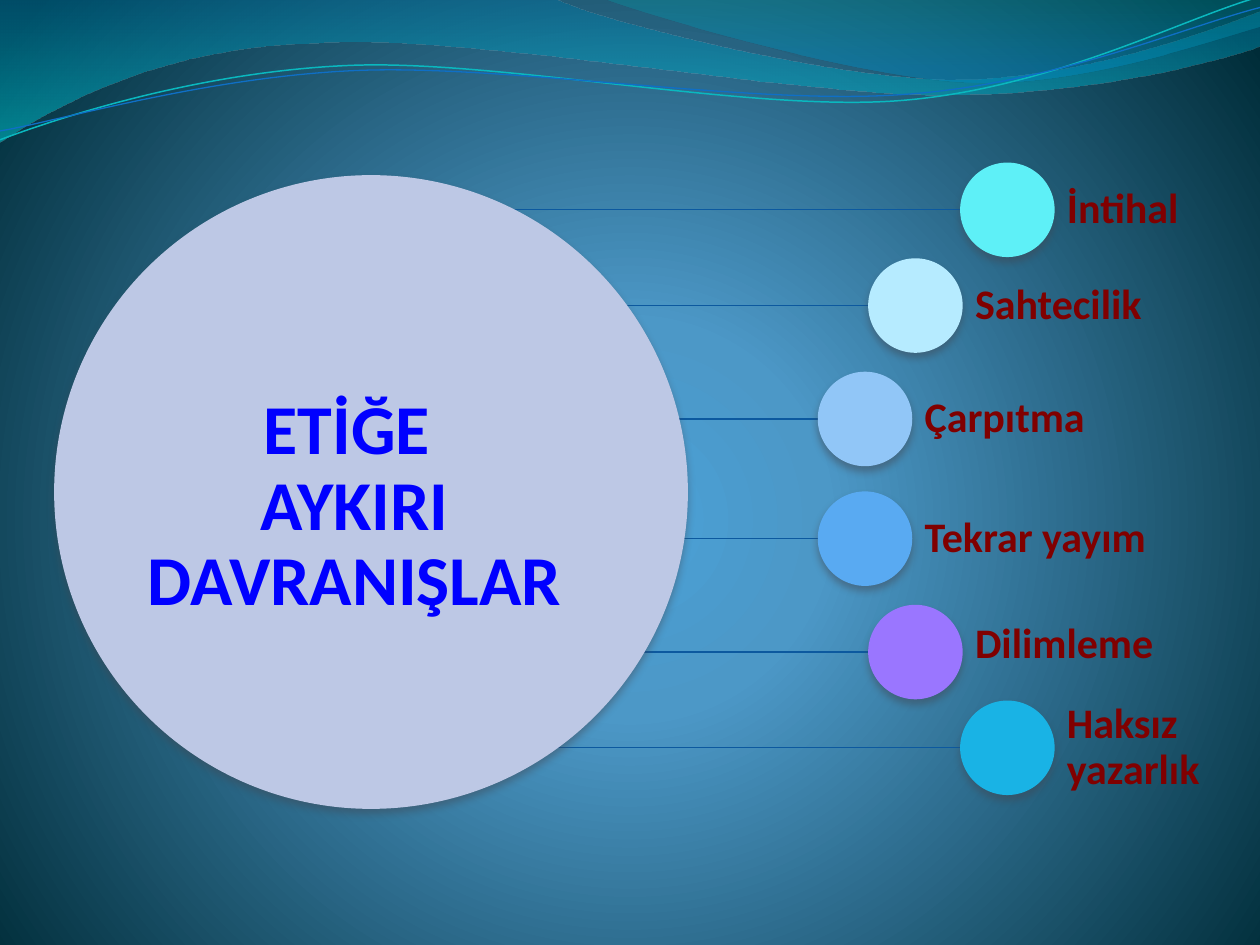
import math
from dataclasses import dataclass

from lxml import etree
from pptx import Presentation
from pptx.dml.color import RGBColor
from pptx.enum.shapes import MSO_CONNECTOR, MSO_SHAPE
from pptx.enum.text import MSO_ANCHOR, PP_ALIGN
from pptx.oxml.ns import qn
from pptx.util import Inches, Pt

OVAL = MSO_SHAPE.OVAL
STRAIGHT = MSO_CONNECTOR.STRAIGHT
LEFT, CENTER = PP_ALIGN.LEFT, PP_ALIGN.CENTER
MIDDLE, BOTTOM = MSO_ANCHOR.MIDDLE, MSO_ANCHOR.BOTTOM

FONT = "Calibri"
BLUE = RGBColor(0x00, 0x00, 0xFF)
MAROON = RGBColor(0x80, 0x00, 0x00)
LAVENDER = RGBColor(0xBD, 0xC8, 0xE5)
LINE_BLUE = RGBColor(0x0C, 0x59, 0x9F)
WAVE_TEAL = RGBColor(0x0A, 0xB8, 0xBF)
WAVE_BLUE = RGBColor(0x0F, 0x6F, 0xC6)
SHADOW = RGBColor(0x42, 0x46, 0x51)

# Gradient stops: position, colour, opacity (numbers in percent)
PAGE_STOPS = [(0, RGBColor(0x4A, 0xA0, 0xD6), 100), (25, RGBColor(0x4C, 0x98, 0xC7), 100),
              (100, RGBColor(0x00, 0x2C, 0x38), 100)]
WIDE_WAVE_STOPS = [(0, RGBColor(0x00, 0x74, 0xA1), 45), (100, RGBColor(0x00, 0xC6, 0xCF), 55)]
SMALL_WAVE_STOPS = [(0, RGBColor(0x00, 0xA1, 0xA9), 30), (80, RGBColor(0x00, 0x8B, 0xBF), 45)]

# Outlines: one point is a straight step, three points are a Bezier step
WIDE_WAVE = [[(0, 0)], [(4.4, -0.01)], [(4.76, 0.17), (6.64, 0.63), (7.58, 0.63)],
             [(8.53, 0.63), (9.58, 0.26), (10, 0.09)], [(10.01, 0.36)],
             [(9.83, 0.44), (8.7, 0.76), (7.46, 0.75)], [(6.22, 0.75), (3.82, 0.28), (2.57, 0.34)],
             [(1.29, 0.36), (0.46, 0.83), (-0.01, 1.13)]]
SMALL_WAVE = [[(4.79, -0.01)], [(5.09, 0.11), (6.82, 0.62), (7.69, 0.65)],
              [(8.56, 0.69), (9.61, 0.32), (10, 0.21)], [(10, 0)]]
TEAL_CURVE = [[(0, 1.11)], [(0.48, 0.93), (1.58, 0.57), (2.77, 0.52)],
              [(3.95, 0.47), (5.93, 0.89), (7.13, 0.8)], [(8.33, 0.71), (9.38, 0.15), (9.98, -0.02)]]
BLUE_CURVE = [[(0, 1.04)], [(0.47, 0.96), (1.64, 0.61), (2.83, 0.56)],
              [(4.03, 0.51), (5.97, 0.84), (7.17, 0.75)], [(8.36, 0.67), (9.41, 0.21), (10, 0.06)]]
CURVE_TILT = -2.7
CURVE_CENTER = (5, 0.58)

DOT = 0.75


@dataclass
class Behaviour:
    """One branch; dot_left and dot_top are measured from the diagram's corner."""
    name: str
    colour: RGBColor
    dot_left: float
    dot_top: float
    label_width: float
    label_shift: float = 0
    line_shift: float = 0


BEHAVIOURS = [
    Behaviour("İntihal", RGBColor(0x5E, 0xF0, 0xF7), 7.19, 0, 1.14),
    Behaviour("Sahtecilik", RGBColor(0xB6, 0xEB, 0xFF), 6.46, 0.76, 2.71, line_shift=-0.37),
    Behaviour("Çarpıtma", RGBColor(0x91, 0xC6, 0xF7), 6.06, 1.66, 1.5),
    Behaviour("Tekrar yayım", RGBColor(0x59, 0xAA, 0xF2), 6.06, 2.61, 2.16),
    Behaviour("Dilimleme", RGBColor(0x9A, 0x76, 0xFF), 6.46, 3.51, 1.63, label_shift=-0.06),
    Behaviour("Haksız yazarlık", RGBColor(0x19, 0xB3, 0xE5), 7.19, 4.27, 1.26),
]


def add_colour(parent, colour, opacity):
    node = etree.SubElement(parent, qn("a:srgbClr"), val=str(colour))
    if opacity < 100:
        etree.SubElement(node, qn("a:alpha"), val=str(opacity * 1000))


def set_gradient(fill, owner, stops, circular=False):
    """Fill with the stops, top to bottom or outwards from a circle."""
    fill.gradient()
    gradient = owner.find(".//" + qn("a:gradFill"))
    for child in list(gradient):
        gradient.remove(child)
    stop_list = etree.SubElement(gradient, qn("a:gsLst"))
    for position, colour, opacity in stops:
        stop = etree.SubElement(stop_list, qn("a:gs"), pos=str(position * 1000))
        add_colour(stop, colour, opacity)
    if circular:
        route = etree.SubElement(gradient, qn("a:path"), path="circle")
        etree.SubElement(route, qn("a:fillToRect"), l="10000", t="110000", r="10000", b="100000")
    else:
        etree.SubElement(gradient, qn("a:lin"), ang="5400000", scaled="1")


def turn(point, degrees):
    """Turn a point clockwise about the middle of the curves."""
    angle = math.radians(degrees)
    x, y = (value - middle for value, middle in zip(point, CURVE_CENTER))
    return (CURVE_CENTER[0] + x * math.cos(angle) - y * math.sin(angle),
            CURVE_CENTER[1] + x * math.sin(angle) + y * math.cos(angle))


def add_outline(page, steps, close, tilt=0):
    """Draw the steps, which show the outline as it lies after the tilt."""
    steps = [[tuple(Inches(value) for value in turn(point, -tilt)) for point in step]
             for step in steps]
    anchors = [step[-1] for step in steps]
    builder = page.shapes.build_freeform(*anchors[0])
    builder.add_line_segments(anchors[1:], close=close)
    shape = builder.convert_to_shape()
    shape.shadow.inherit = False
    for segment, step in zip(list(shape.element.iter(qn("a:lnTo"))), steps[1:]):
        if len(step) == 3:
            segment.tag = qn("a:cubicBezTo")
            for child in list(segment):
                segment.remove(child)
            for x, y in step:
                etree.SubElement(segment, qn("a:pt"), x=str(x - shape.left), y=str(y - shape.top))
    shape.rotation = tilt
    return shape


def add_backdrop(page):
    set_gradient(page.background.fill, page.element, PAGE_STOPS, circular=True)
    for steps, stops in ((WIDE_WAVE, WIDE_WAVE_STOPS), (SMALL_WAVE, SMALL_WAVE_STOPS)):
        wave = add_outline(page, steps, close=True)
        set_gradient(wave.fill, wave.element, stops)
        wave.line.fill.background()
    for steps, colour, width in ((TEAL_CURVE, WAVE_TEAL, 0.85), (BLUE_CURVE, WAVE_BLUE, 0.75)):
        curve = add_outline(page, steps, close=False, tilt=CURVE_TILT)
        curve.fill.background()
        curve.line.color.rgb = colour
        curve.line.width = Pt(width)


def add_circle(page, left, top, size, colour):
    circle = page.shapes.add_shape(OVAL, Inches(left), Inches(top), Inches(size), Inches(size))
    circle.fill.solid()
    circle.fill.fore_color.rgb = colour
    circle.line.fill.background()
    effects = etree.SubElement(circle.element.spPr, qn("a:effectLst"))
    shadow = etree.SubElement(effects, qn("a:outerShdw"), blurRad=str(Pt(4.5)),
                              dist=str(Pt(3)), dir="5400000", rotWithShape="0")
    add_colour(shadow, SHADOW, 48)


def add_line(page, start, end, y):
    line = page.shapes.add_connector(STRAIGHT, Inches(start), Inches(y), Inches(end), Inches(y))
    line.line.color.rgb = LINE_BLUE
    line.line.width = Pt(0.75)
    etree.SubElement(line.element.spPr, qn("a:effectLst"))


def add_text(page, box, text, size, colour, align, anchor, side_margin):
    frame = page.shapes.add_textbox(*(Inches(length) for length in box)).text_frame
    frame.word_wrap = True
    frame.vertical_anchor = anchor
    frame.margin_left = frame.margin_right = Inches(side_margin)
    frame.margin_top = frame.margin_bottom = 0
    frame.text = text
    para = frame.paragraphs[0]
    para.alignment = align
    para.line_spacing = 0.9
    for span in para.runs:
        span.font.name = FONT
        span.font.size = Pt(size)
        span.font.bold = True
        span.font.color.rgb = colour


def add_diagram(page, left, top):
    for item in reversed(BEHAVIOURS):
        add_line(page, left + 2.49 + item.line_shift,
                 left + item.dot_left + DOT / 2 + item.line_shift, top + item.dot_top + DOT / 2)
    add_circle(page, left, top + 0.1, 5.03, LAVENDER)
    add_text(page, (left + 0.55, top + 0.57, 3.67, 3.07), "ETİĞE \vAYKIRI DAVRANIŞLAR",
             40, BLUE, CENTER, BOTTOM, 0)
    for item in BEHAVIOURS:
        dot_left, dot_top = left + item.dot_left, top + item.dot_top
        add_circle(page, dot_left, dot_top, DOT, item.colour)
        label_box = (dot_left + DOT, dot_top + item.label_shift, item.label_width, DOT)
        add_text(page, label_box, item.name, 24, MAROON, LEFT, MIDDLE, 0.1)


def main():
    deck = Presentation()
    deck.slide_width, deck.slide_height = Inches(10), Inches(7.5)
    page = deck.slides.add_slide(deck.slide_layouts[6])
    add_backdrop(page)
    add_diagram(page, 0.43, 1.29)
    deck.save("out.pptx")


if __name__ == "__main__":
    main()
